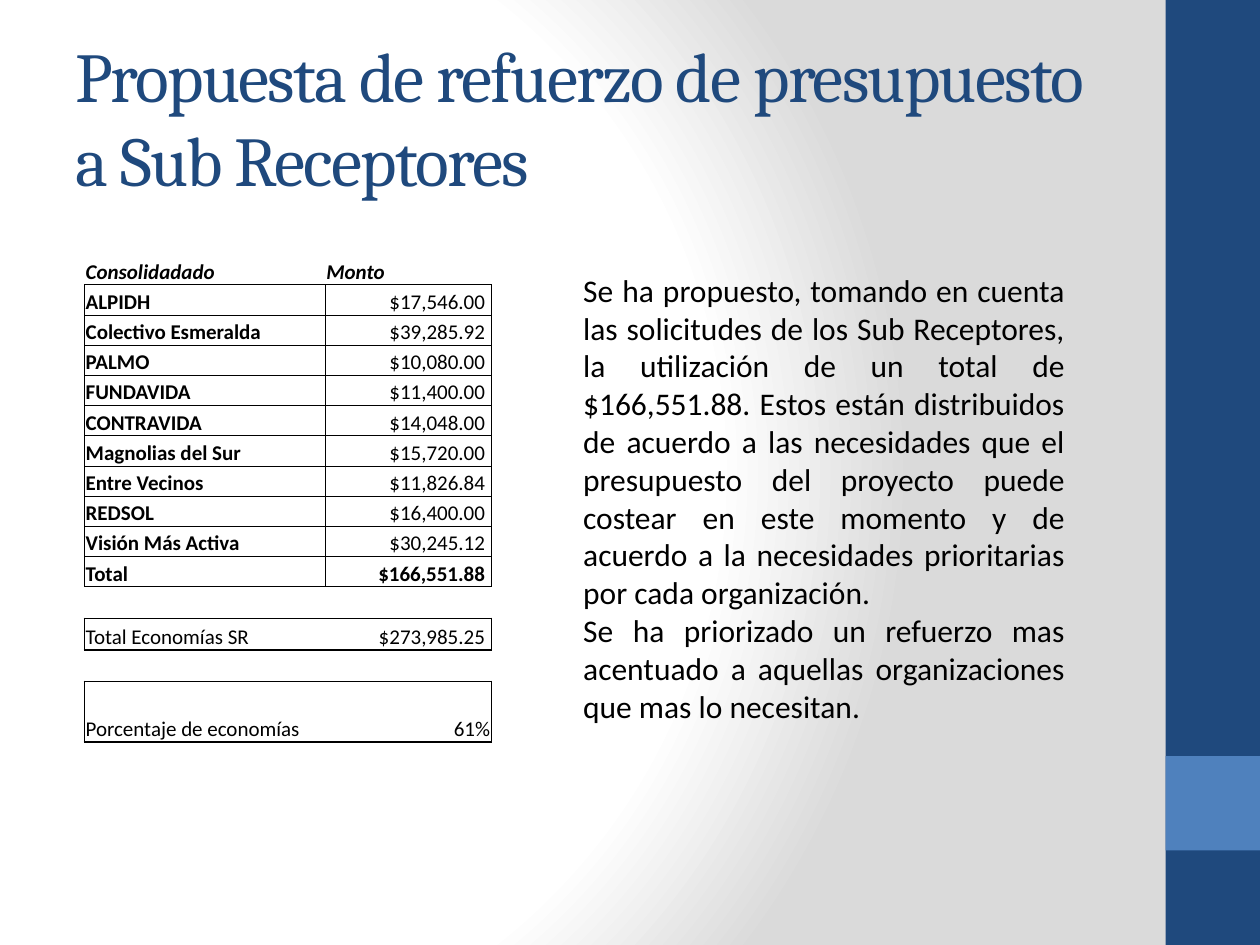
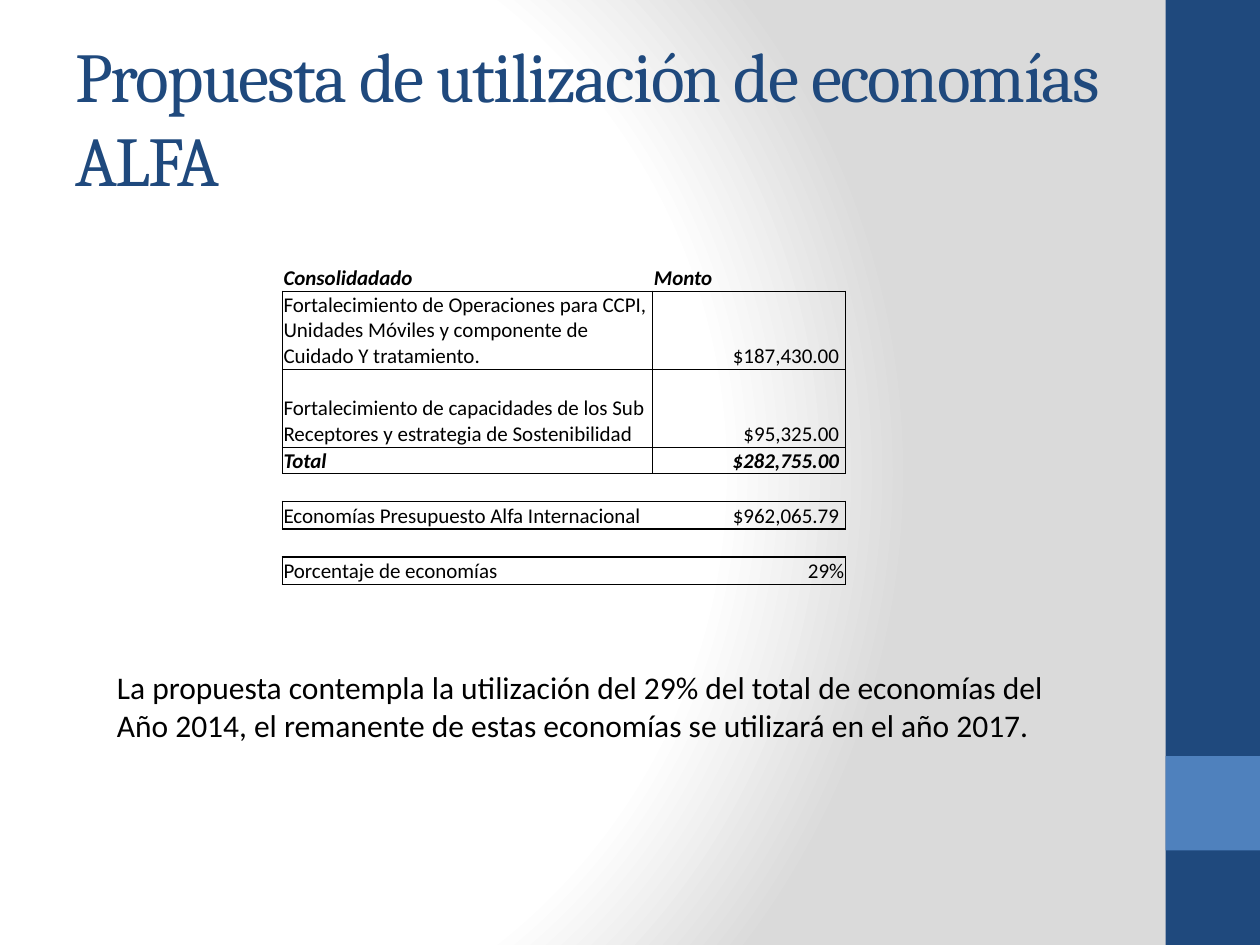
"""Two slides on the proposed use of budget savings, each with a table and a comment."""
from lxml import etree
from pptx import Presentation
from pptx.dml.color import RGBColor
from pptx.enum.shapes import MSO_SHAPE as Shape
from pptx.enum.text import MSO_ANCHOR as Anchor, PP_ALIGN as Align
from pptx.oxml import parse_xml
from pptx.oxml.ns import nsdecls, qn
from pptx.util import Inches, Pt

NAVY = RGBColor(0x1F, 0x49, 0x7D)
BLUE = RGBColor(0x4F, 0x81, 0xBD)
BLACK = RGBColor(0, 0, 0)
WHITE = RGBColor(0xFF, 0xFF, 0xFF)
GREY = RGBColor(0xDA, 0xDA, 0xDA)

BANDS = [(0, 7.5, NAVY), (6, 0.75, BLUE)]
STOPS = [(0, WHITE), (75, WHITE), (100, GREY)]
BORDERS = {"header": (0, 0, 0.5), "item": (0.5, 0.5, 0.5), "gap": (0, 0, 1), "box": (1, 0, 1)}


def write(frame, text, size=18, font="Calibri", color=BLACK, bold=False, italic=False,
          align=Align.LEFT, spacing=None):
    """Fill a text frame, one paragraph for each line of text."""
    for index, line in enumerate(text.split("\n")):
        para = frame.add_paragraph() if index else frame.paragraphs[0]
        para.alignment = align
        if not line:
            etree.SubElement(para._p, qn("a:endParaRPr"), sz=str(size * 100))
            continue
        span = para.add_run()
        span.text = line
        span.font.size = Pt(size)
        span.font.name = font
        span.font.bold = bold
        span.font.italic = italic
        span.font.color.rgb = color
        if spacing is not None:
            span.font._element.set("spc", str(spacing * 100))


def draw_border(cell, side, width):
    """Draw one side of a cell, or clear it when the width is zero."""
    line = etree.SubElement(cell._tc.get_or_add_tcPr(), qn(f"a:ln{side}"), w=str(Pt(width)))
    if width:
        fill = etree.SubElement(line, qn("a:solidFill"))
        etree.SubElement(fill, qn("a:srgbClr"), val=str(BLACK))
    else:
        etree.SubElement(line, qn("a:noFill"))


organizations = [
    ("ALPIDH", "$17,546.00"),
    ("Colectivo Esmeralda", "$39,285.92"),
    ("PALMO", "$10,080.00"),
    ("FUNDAVIDA", "$11,400.00"),
    ("CONTRAVIDA", "$14,048.00"),
    ("Magnolias del Sur", "$15,720.00"),
    ("Entre Vecinos", "$11,826.84"),
    ("REDSOL", "$16,400.00"),
    ("Visión Más Activa", "$30,245.12"),
]
header = ("Consolidadado", "Monto", "bi", "bi")
blank = ("", "", "", "")

slides = [
    {
        "title": "Propuesta de refuerzo de presupuesto a Sub Receptores",
        "table": (0.67, 2.02),
        "columns": (1.91, 1.32),
        "rows": [
            ("header", 0.24, *header),
            *[("item", 0.24, name, amount, "b", "") for name, amount in organizations],
            ("item", 0.24, "Total", "$166,551.88", "b", "b"),
            ("gap", 0.25, *blank),
            ("box", 0.25, "Total Economías SR", "$273,985.25", "", ""),
            ("gap", 0.25, *blank),
            ("box", 0.48, "Porcentaje de economías", "61%", "", ""),
        ],
        "comment": (4.53, 2.1, 4.02, 3.74),
        "align": Align.JUSTIFY,
        "wrap": True,
        "text": "Se ha propuesto, tomando en cuenta las solicitudes de los Sub Receptores, "
                "la utilización de un total de $166,551.88. Estos están distribuidos de acuerdo "
                "a las necesidades que el presupuesto del proyecto puede costear en este momento "
                "y de acuerdo a la necesidades prioritarias por cada organización.\n"
                "Se ha priorizado un refuerzo mas acentuado a aquellas organizaciones "
                "que mas lo necesitan.",
    },
    {
        "title": "Propuesta de utilización de economías ALFA",
        "table": (2.24, 2.1),
        "columns": (2.94, 1.53),
        "rows": [
            ("header", 0.21, *header),
            ("item", 0.62, "Fortalecimiento de Operaciones para CCPI, Unidades Móviles y "
             "componente de Cuidado Y tratamiento.", "$187,430.00", "", ""),
            ("item", 0.62, "Fortalecimiento de capacidades de los Sub Receptores y "
             "estrategia de Sostenibilidad", "$95,325.00", "", ""),
            ("item", 0.21, "Total", "$282,755.00", "bi", "bi"),
            ("gap", 0.22, *blank),
            ("box", 0.22, "Economías Presupuesto Alfa Internacional", "$962,065.79", "", ""),
            ("gap", 0.22, *blank),
            ("box", 0.22, "Porcentaje de economías", "29%", "", ""),
        ],
        "comment": (0.83, 5.25, 7.66, 0.71),
        "align": Align.LEFT,
        "wrap": False,
        "text": "La propuesta contempla la utilización del 29% del total de economías del\n"
                "Año 2014, el remanente de estas economías se utilizará en el año 2017.",
    },
]

deck = Presentation()
deck.slide_width, deck.slide_height = Inches(10), Inches(7.5)

backdrop = deck.slide_master.background
backdrop.fill.solid()
solid = backdrop._cSld.find(".//" + qn("a:solidFill"))
stops = "".join(f'<a:gs pos="{place * 1000}"><a:srgbClr val="{color}"/></a:gs>'
                for place, color in STOPS)
solid.getparent().replace(solid, parse_xml(
    f'<a:gradFill {nsdecls("a")} rotWithShape="1"><a:gsLst>{stops}</a:gsLst><a:path path="circle">'
    '<a:fillToRect l="20000" t="50000" r="100000" b="50000"/></a:path></a:gradFill>'))

for content in slides:
    page = deck.slides.add_slide(deck.slide_layouts[6])
    for top, height, color in BANDS:
        band = page.shapes.add_shape(Shape.RECTANGLE, Inches(9.25), Inches(top),
                                     Inches(0.75), Inches(height))
        band.shadow.inherit = False
        band.fill.solid()
        band.fill.fore_color.rgb = color
        band.line.fill.background()

    title = page.shapes.add_textbox(Inches(0.5), Inches(0.3), Inches(8.33), Inches(1.25)).text_frame
    title.word_wrap = True
    title.vertical_anchor = Anchor.MIDDLE
    write(title, content["title"], size=40, font="Cambria", color=NAVY, spacing=-1)

    rows, columns = content["rows"], content["columns"]
    left, top = content["table"]
    table = page.shapes.add_table(len(rows), len(columns), Inches(left), Inches(top),
                                  Inches(sum(columns)), Inches(sum(row[1] for row in rows))).table
    table.first_row = table.horz_banding = False
    for column, width in zip(table.columns, columns):
        column.width = Inches(width)

    above = 0
    for index, (kind, height, label, amount, label_style, amount_style) in enumerate(rows):
        table.rows[index].height = Inches(height)
        outer, inner, below = BORDERS[kind]
        for number, (text, style) in enumerate([(label, label_style), (amount, amount_style)]):
            cell = table.cell(index, number)
            is_money = number == 1 and text.startswith("$")
            cell.margin_left = cell.margin_top = Inches(0.01)
            cell.margin_right = Inches(0.05 if is_money else 0.01)
            cell.margin_bottom = 0
            cell.vertical_anchor = Anchor.BOTTOM
            sides = (inner, outer) if number else (outer, inner)
            for side, width in zip("LRTB", (*sides, above, below)):
                draw_border(cell, side, width)
            cell.fill.background()
            align = Align.RIGHT if number and kind != "header" else Align.LEFT
            write(cell.text_frame, text, size=12, bold="b" in style, italic="i" in style,
                  align=align)
        above = below

    comment = page.shapes.add_textbox(*map(Inches, content["comment"])).text_frame
    comment.word_wrap = content["wrap"]
    write(comment, content["text"], align=content["align"])

deck.save("out.pptx")
